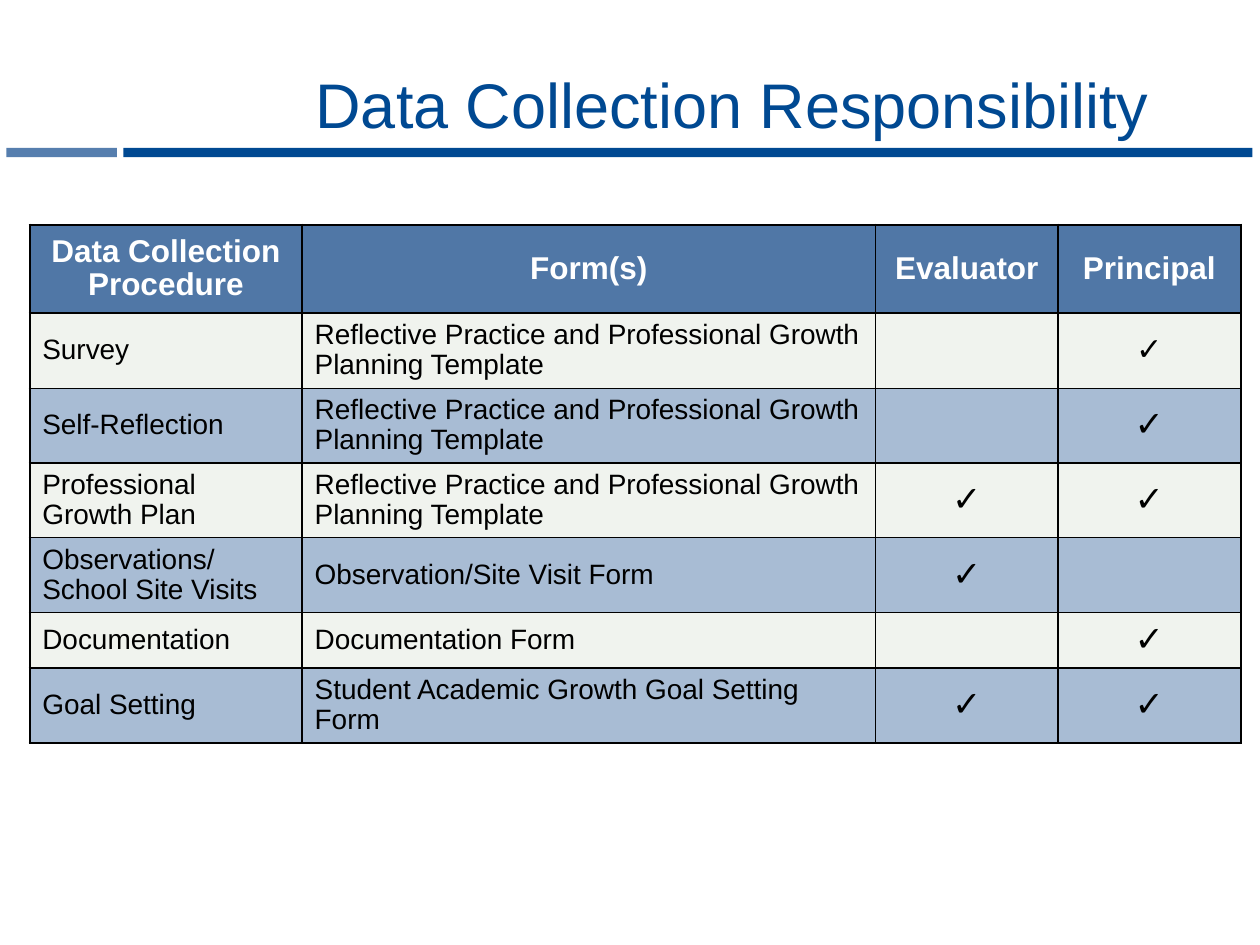
import pptx
import pptx.util
import pptx.dml.color
import pptx.enum.shapes
import pptx.enum.text
import pptx.oxml
import pptx.oxml.ns

Cm = pptx.util.Cm
Pt = pptx.util.Pt
CENTER = pptx.enum.text.PP_ALIGN.CENTER
LEFT = pptx.enum.text.PP_ALIGN.LEFT
MIDDLE = pptx.enum.text.MSO_ANCHOR.MIDDLE

FONT = "Arial"
NAVY, STEEL, HEADER = "004992", "567EAE", "5077A6"
PALE, BLUE, BLACK, WHITE = "F0F3EE", "A8BCD4", "000000", "FFFFFF"
CHECK = "✓"
TEMPLATE = "Reflective Practice and Professional Growth Planning Template"

HEADINGS = ["Data Collection Procedure", "Form(s)", "Evaluator", "Principal"]
PROCEDURES = [
    ("Survey", TEMPLATE, "", CHECK),
    ("Self-Reflection", TEMPLATE, "", CHECK),
    ("Professional Growth Plan", TEMPLATE, CHECK, CHECK),
    ("Observations/\nSchool Site Visits", "Observation/Site Visit Form", CHECK, ""),
    ("Documentation", "Documentation Form", "", CHECK),
    ("Goal Setting", "Student Academic Growth Goal Setting Form", CHECK, CHECK),
]
COLUMN_WIDTHS = [5.49, 11.56, 3.68, 3.68]
ROW_HEIGHTS = [1.78, 1.51, 1.51, 1.51, 1.51, 1.04, 1.51]
ROW_RULES = [1.5, 1.5, 0.5, 1, 1, 1, 1, 1]
COLUMN_RULES = [1.5, 1, 1, 1, 1.5]


def color(value):
    return pptx.dml.color.RGBColor.from_string(value)


def fill_solid(item, value):
    item.fill.solid()
    item.fill.fore_color.rgb = color(value)


def write(frame, text, size, value, align, bold=False, spacing=None):
    for index, line in enumerate(text.split("\n")):
        para = frame.add_paragraph() if index else frame.paragraphs[0]
        para.alignment = align
        para.line_spacing = spacing
        para.font.size = Pt(size)
        if line:
            span = para.add_run()
            span.text = line
            span.font.name = FONT
            span.font.size = Pt(size)
            span.font.bold = bold
            span.font.color.rgb = color(value)


def add_title(page, left, top, width, height):
    title = page.shapes.title
    title.left, title.top = Cm(left), Cm(top)
    title.width, title.height = Cm(width), Cm(height)
    title.text_frame.vertical_anchor = MIDDLE
    write(title.text_frame, "Data Collection Responsibility", 36, NAVY, CENTER)


def add_rule(page, left, top, width, height):
    short, gap = 2.23, 0.13
    start = short + gap
    for offset, length, value in ((0, short, STEEL), (start, width - start, NAVY)):
        bar = page.shapes.add_shape(
            pptx.enum.shapes.MSO_SHAPE.RECTANGLE,
            Cm(left + offset), Cm(top), Cm(length), Cm(height))
        bar.shadow.inherit = False
        fill_solid(bar, value)
        bar.line.fill.background()


def set_borders(cell, row, column):
    widths = {
        "lnL": COLUMN_RULES[column], "lnR": COLUMN_RULES[column + 1],
        "lnT": ROW_RULES[row], "lnB": ROW_RULES[row + 1],
    }
    properties = cell._tc.get_or_add_tcPr()
    for index, (side, width) in enumerate(widths.items()):
        properties.insert(index, pptx.oxml.parse_xml(
            f'<a:{side} {pptx.oxml.ns.nsdecls("a")} w="{int(Pt(width))}">'
            f'<a:solidFill><a:srgbClr val="{BLACK}"/></a:solidFill></a:{side}>'))


def fill_cell(cell, text, row, column):
    heading = row == 0
    fill_solid(cell, HEADER if heading else PALE if row % 2 else BLUE)
    set_borders(cell, row, column)
    cell.vertical_anchor = MIDDLE
    if heading:
        write(cell.text_frame, text, 18, WHITE, CENTER, True, 0.96)
    elif column < 2:
        write(cell.text_frame, text, 16, BLACK, LEFT, spacing=0.96)
    else:
        write(cell.text_frame, text, 18 if row == 1 else 20, BLACK, CENTER, spacing=0.96)


def add_responsibilities(page, left, top):
    rows = [HEADINGS, *PROCEDURES]
    table = page.shapes.add_table(
        len(rows), len(HEADINGS), Cm(left), Cm(top),
        Cm(sum(COLUMN_WIDTHS)), Cm(sum(ROW_HEIGHTS))).table
    for column, width in zip(table.columns, COLUMN_WIDTHS):
        column.width = Cm(width)
    for row, height in zip(table.rows, ROW_HEIGHTS):
        row.height = Cm(height)
    for row, texts in enumerate(rows):
        for column, text in enumerate(texts):
            fill_cell(table.cell(row, column), text, row, column)


def main():
    deck = pptx.Presentation()
    deck.slide_width, deck.slide_height = Cm(25.4), Cm(19.05)
    page = deck.slides.add_slide(deck.slide_layouts.get_by_name("Title Only"))
    add_rule(page, 0.13, 2.98, 25.12, 0.19)
    add_title(page, 2.06, 0.74, 25.4, 2.67)
    add_responsibilities(page, 0.6, 4.53)
    deck.save("out.pptx")


if __name__ == "__main__":
    main()
